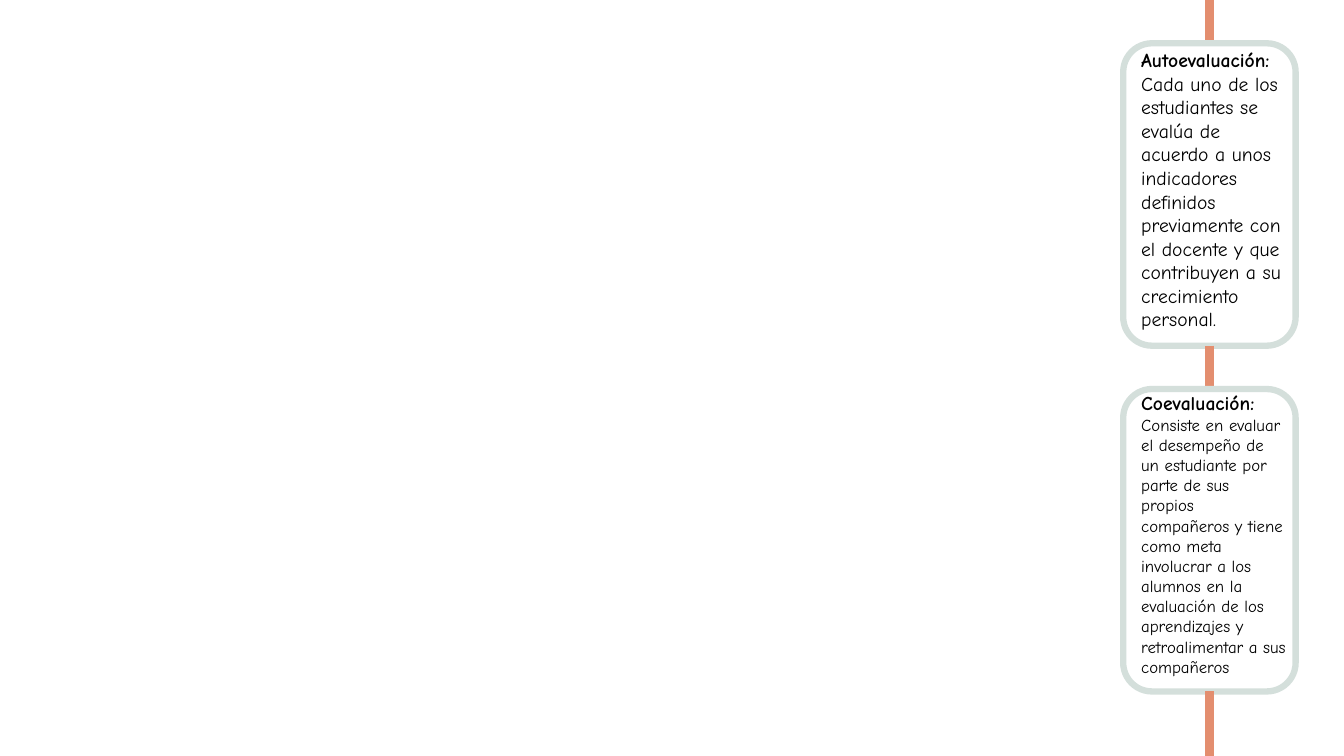
from lxml import etree
from pptx import Presentation
from pptx.dml.color import RGBColor
from pptx.enum.shapes import MSO_CONNECTOR, MSO_SHAPE
from pptx.enum.text import MSO_AUTO_SIZE
from pptx.oxml.ns import qn
from pptx.util import Inches, Pt

STRAIGHT = MSO_CONNECTOR.STRAIGHT
ROUNDED = MSO_SHAPE.ROUNDED_RECTANGLE
FIT_SHAPE = MSO_AUTO_SIZE.SHAPE_TO_FIT_TEXT

WHITE = RGBColor(0xFF, 0xFF, 0xFF)
BLACK = RGBColor(0x00, 0x00, 0x00)
CORAL = RGBColor(0xE3, 0x8E, 0x6F)
SAGE = RGBColor(0xD4, 0xDF, 0xDB)

TOP, BOTTOM = 0, 2  # connection sites of a rectangle

SLIDE_W, SLIDE_H = 13.33, 7.5
CARD_X, CARD_W, CARD_H = 11.14, 1.71, 3
GAP = 0.43
AXIS_X = CARD_X + CARD_W / 2
TEXT_X, TEXT_W = 11.22, 1.64

# term, definition, definition size, text top, text height
EVALUATIONS = [
    ("Autoevaluación: ",
     "Cada uno de los estudiantes se evalúa de acuerdo a unos indicadores "
     "definidos previamente con el docente y que contribuyen a su "
     "crecimiento personal.", 14, 0.43, 2.93),
    ("Coevaluación: ",
     "Consiste en evaluar el desempeño de un estudiante por parte de sus "
     "propios compañeros y tiene como meta involucrar a los alumnos en la "
     "evaluación de los aprendizajes y retroalimentar a sus compañeros",
     12, 3.83, 2.96),
]


class Timeline:
    font_name = "Comic Neue"
    term_size = 14

    def __init__(self, slide):
        self.shapes = slide.shapes

    def link(self, top, bottom):
        """Draw a vertical stretch of the axis between two heights."""
        link = self.shapes.add_connector(
            STRAIGHT, Inches(AXIS_X), Inches(top), Inches(AXIS_X), Inches(bottom))
        link.line.color.rgb = CORAL
        link.line.width = Pt(6)
        etree.SubElement(link._element.spPr, qn("a:effectLst"))
        return link

    def card(self, top):
        card = self.shapes.add_shape(
            ROUNDED, Inches(CARD_X), Inches(top), Inches(CARD_W), Inches(CARD_H))
        card.shadow.inherit = False
        card.fill.solid()
        card.fill.fore_color.rgb = WHITE
        card.line.color.rgb = SAGE
        card.line.width = Pt(4.5)
        return card

    def definition(self, term, meaning, size, top, height):
        box = self.shapes.add_textbox(
            Inches(TEXT_X), Inches(top), Inches(TEXT_W), Inches(height))
        frame = box.text_frame
        frame.word_wrap = True
        frame.auto_size = FIT_SHAPE
        paragraph = frame.paragraphs[0]
        for text, points, bold in ((term, self.term_size, True),
                                   (meaning, size, False)):
            run = paragraph.add_run()
            run.text = text
            run.font.name = self.font_name
            run.font.size = Pt(points)
            run.font.bold = bold
            run.font.color.rgb = BLACK


def main():
    deck = Presentation()
    deck.slide_width, deck.slide_height = Inches(SLIDE_W), Inches(SLIDE_H)
    timeline = Timeline(deck.slides.add_slide(deck.slide_layouts[6]))

    previous_card, previous_bottom = None, 0
    for _ in EVALUATIONS:
        card_top = previous_bottom + GAP
        link = timeline.link(previous_bottom, card_top)
        card = timeline.card(card_top)
        if previous_card is not None:
            link.begin_connect(previous_card, BOTTOM)
        link.end_connect(card, TOP)
        previous_card, previous_bottom = card, card_top + CARD_H
    last_link = timeline.link(previous_bottom, SLIDE_H)
    last_link.begin_connect(previous_card, BOTTOM)

    for evaluation in EVALUATIONS:
        timeline.definition(*evaluation)

    deck.save("out.pptx")


if __name__ == "__main__":
    main()
